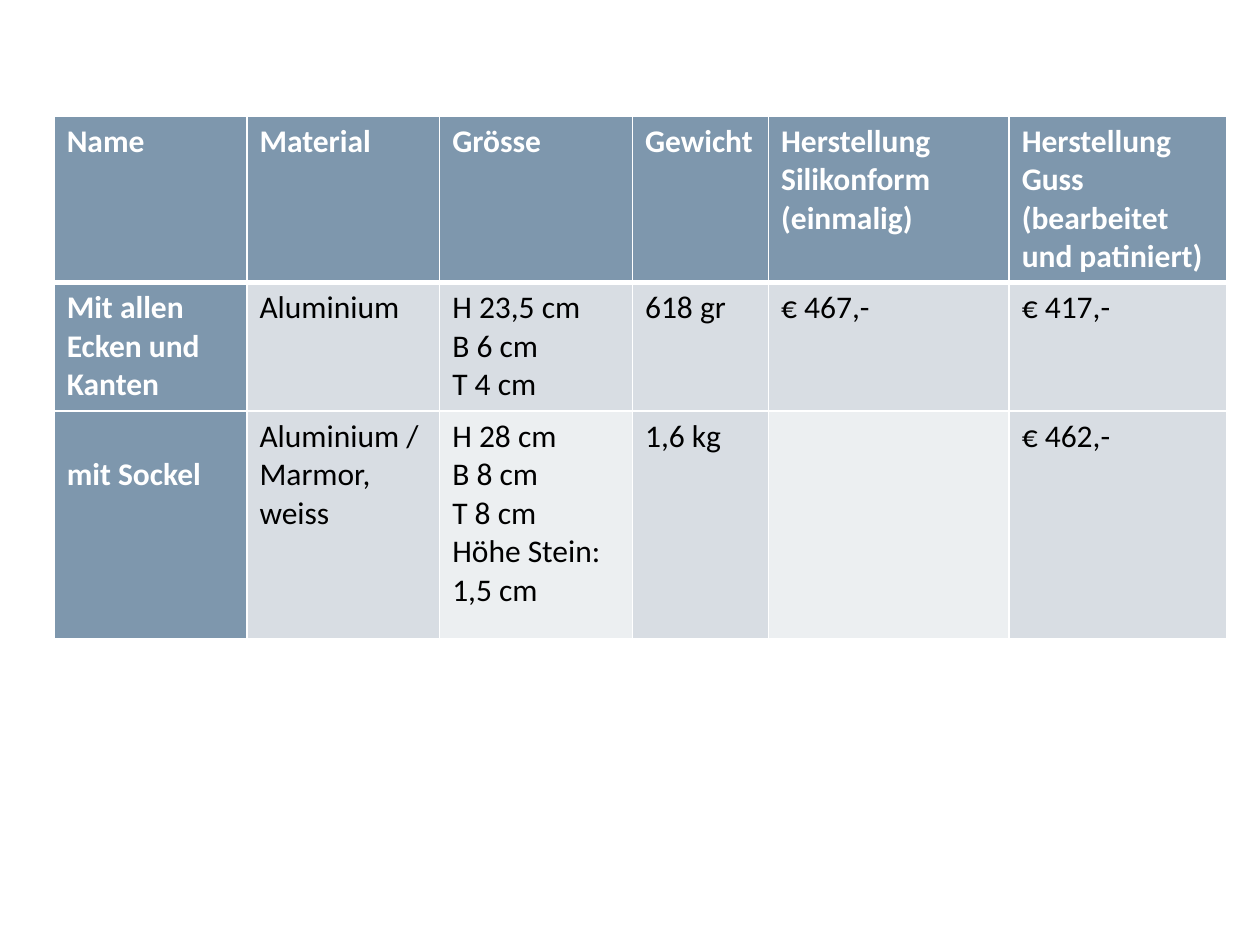
from lxml import etree
from pptx import Presentation
from pptx.dml.color import RGBColor
from pptx.oxml.ns import qn
from pptx.util import Inches, Pt

BLANK_LAYOUT = 6
WIDTH, HEIGHT = 10, 7.5
WHITE, BLACK = "FFFFFF", "000000"
STEEL, MIST, PALE = "7E97AD", "D8DDE3", "ECEFF1"

HEADINGS = ["Name", "Material", "Grösse", "Gewicht",
            "Herstellung Silikonform\n(einmalig)",
            "Herstellung Guss (bearbeitet und patiniert)"]
WITHOUT_BASE = ["Mit allen Ecken und Kanten", "Aluminium",
                "H 23,5 cm\nB 6 cm\nT 4 cm", "618 gr", "€ 467,-", "€ 417,-"]
WITH_BASE = ["mit Sockel", "Aluminium /\nMarmor, weiss",
             "H 28 cm\nB 8 cm\nT 8 cm\nHöhe Stein:\n1,5 cm", "1,6 kg", "", "€ 462,-"]
PRICE_LIST = [HEADINGS, WITHOUT_BASE, WITH_BASE]
COLUMN_WIDTHS = [1.53, 1.53, 1.53, 1.08, 1.91, 1.73]
ROW_HEIGHTS = [1.31, 1.02, 1.81]
PALE_CELLS = {(2, 2), (2, 4)}
LINE_DROPS = {(2, 0): 1}


def colour(value):
    return RGBColor.from_string(value)


def write(frame, text, font="Calibri", size=18, color=BLACK, bold=False):
    frame.text = text
    for paragraph in frame.paragraphs:
        for run in paragraph.runs:
            run.font.name = font
            run.font.size = Pt(size)
            run.font.bold = bold
            run.font.color.rgb = colour(color)


class SlideBuilder:
    line_height = 0.305
    cell_margin = 0.05
    thin, thick = 1, 3

    def __init__(self, presentation):
        layout = presentation.slide_layouts[BLANK_LAYOUT]
        self.slide = presentation.slides.add_slide(layout)

    def border(self, cell, side, points):
        properties = cell._tc.get_or_add_tcPr()
        line = etree.SubElement(properties, qn(f"a:ln{side}"), w=str(Pt(points)))
        fill = etree.SubElement(line, qn("a:solidFill"))
        etree.SubElement(fill, qn("a:srgbClr"), val=WHITE)

    def cell(self, cell, text, fill, color, bold, widths, drop):
        write(cell.text_frame, text, color=color, bold=bold)
        cell.margin_top = Inches(self.cell_margin + drop * self.line_height)
        for side, points in widths.items():
            self.border(cell, side, points)
        cell.fill.solid()
        cell.fill.fore_color.rgb = colour(fill)

    def table(self, rows, left, top, column_widths, row_heights):
        table = self.slide.shapes.add_table(
            len(rows), len(column_widths),
            Inches(left * WIDTH), Inches(top * HEIGHT),
            Inches(sum(column_widths)), Inches(sum(row_heights))).table
        for column, width in zip(table.columns, column_widths):
            column.width = Inches(width)
        for row, height in zip(table.rows, row_heights):
            row.height = Inches(height)
        for r, texts in enumerate(rows):
            for c, text in enumerate(texts):
                heading = r == 0 or c == 0
                body_fill = PALE if (r, c) in PALE_CELLS else MIST
                widths = {"L": self.thin, "R": self.thin,
                          "T": self.thick if r == 1 else self.thin,
                          "B": self.thick if r == 0 else self.thin}
                self.cell(table.cell(r, c), text,
                          STEEL if heading else body_fill,
                          WHITE if heading else BLACK, heading,
                          widths, LINE_DROPS.get((r, c), 0))


def main():
    presentation = Presentation()
    presentation.slide_width = Inches(WIDTH)
    presentation.slide_height = Inches(HEIGHT)
    builder = SlideBuilder(presentation)
    builder.table(PRICE_LIST, 0.043, 0.123, COLUMN_WIDTHS, ROW_HEIGHTS)
    presentation.save("out.pptx")


if __name__ == "__main__":
    main()
